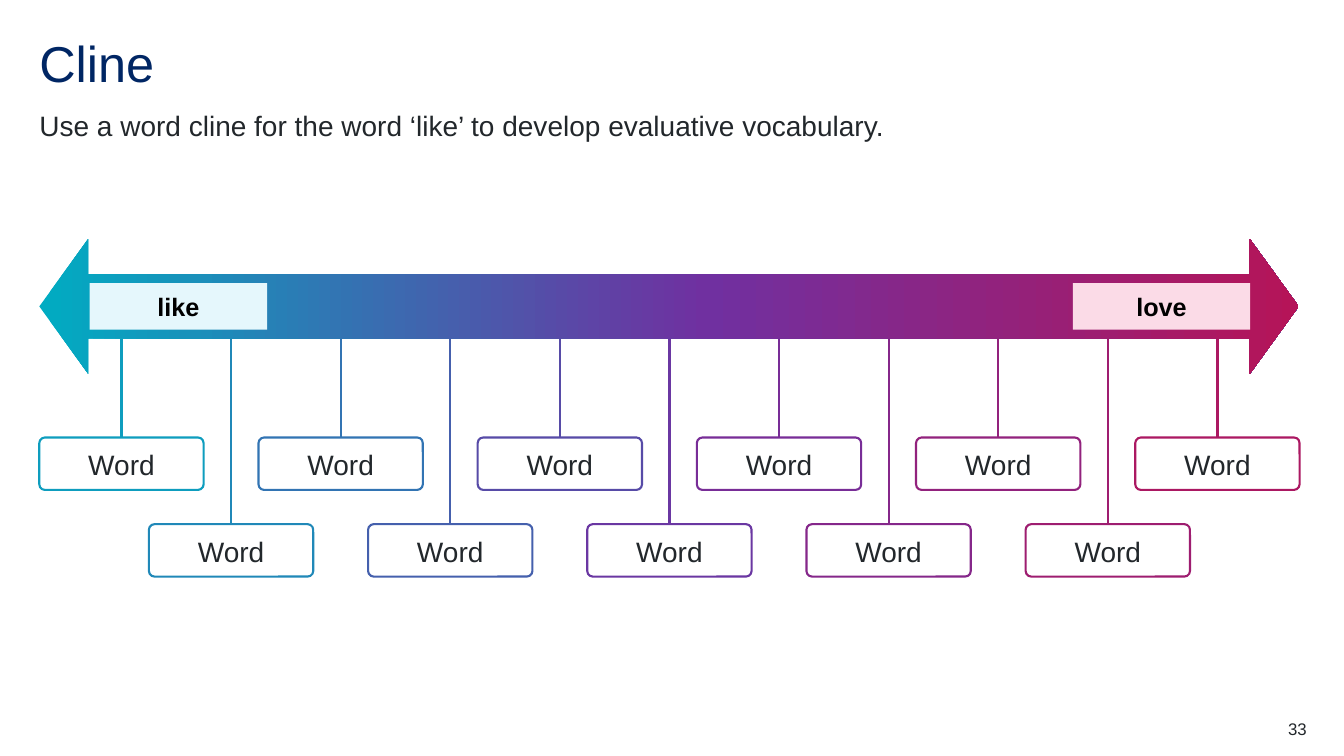
from copy import deepcopy
from dataclasses import dataclass

from lxml import etree
from pptx import Presentation
from pptx.dml.color import RGBColor
from pptx.enum import shapes, text
from pptx.oxml.ns import qn
from pptx.util import Inches, Pt

COLOURS = {
    "title": "002664", "body": "22272B", "label": "000000",
    "like": "E5F7FC", "love": "FBDBE7",
}
ARROW_STOPS = [(0, "00ACC2"), (53, "7030A0"), (100, "B51458")]
WORD_COLOURS = [
    "0E9DBE", "2088B8", "3274B3", "4560AD", "574BA7", "6A37A2",
    "782D97", "85278A", "92227D", "9E1D70", "AB1862",
]
LEFT, WIDTH = 0.39, 12.56
WORD_WIDTH, WORD_HEIGHT = 1.63, 0.52
WORD_STEP = 1.087
ROW_TOPS = (4.34, 5.2)
STEM_TOP = 3.36


@dataclass(frozen=True)
class Style:
    size: int
    colour: str
    bold: bool = False
    align: text.PP_ALIGN = text.PP_ALIGN.LEFT
    anchor: text.MSO_ANCHOR = text.MSO_ANCHOR.TOP
    insets: tuple[float, float, float, float] = (0, 0, 0, 0)
    line_spacing: float = 1.0
    space_after: int = 0


@dataclass(frozen=True)
class EndLabel:
    wording: str
    left: float


TITLE = Style(36, COLOURS["title"], line_spacing=0.9)
INTRO = Style(20, COLOURS["body"], anchor=text.MSO_ANCHOR.BOTTOM,
              line_spacing=1.5, space_after=12)
END = Style(18, COLOURS["label"], True, text.PP_ALIGN.CENTER,
            text.MSO_ANCHOR.MIDDLE, (0.09, 0.04, 0.09, 0.04))
WORD = Style(20, COLOURS["body"], align=text.PP_ALIGN.CENTER,
             anchor=text.MSO_ANCHOR.BOTTOM, insets=(0.16, 0, 0.16, 0.07))
NUMBER = Style(12, COLOURS["body"], align=text.PP_ALIGN.RIGHT)
END_LABELS = [EndLabel("like", 0.89), EndLabel("love", 10.64)]


def set_all(target, values: dict) -> None:
    for name, value in values.items():
        setattr(target, name, value)


def write(box, wording: str, style: Style) -> None:
    frame = box.text_frame
    left, top, right, bottom = map(Inches, style.insets)
    set_all(frame, {
        "word_wrap": True, "auto_size": text.MSO_AUTO_SIZE.NONE,
        "vertical_anchor": style.anchor, "margin_left": left,
        "margin_top": top, "margin_right": right, "margin_bottom": bottom,
    })
    para = frame.paragraphs[0]
    set_all(para, {
        "alignment": style.align, "line_spacing": style.line_spacing,
        "space_before": Pt(0), "space_after": Pt(style.space_after),
    })
    span = para.add_run()
    span.text = wording
    set_all(span.font, {"name": "Arial", "size": Pt(style.size), "bold": style.bold})
    span.font.color.rgb = RGBColor.from_string(style.colour)


def add_text(page, at: tuple, wording: str, style: Style) -> None:
    write(page.shapes.add_textbox(*map(Inches, at)), wording, style)


def add_plain_shape(page, kind: shapes.MSO_SHAPE, at: tuple):
    """Add a preset shape without shadow, fill or line."""
    shape = page.shapes.add_shape(kind, *map(Inches, at))
    shape.shadow.inherit = False
    shape.fill.background()
    shape.line.fill.background()
    return shape


def add_arrow(page) -> None:
    arrow = add_plain_shape(page, shapes.MSO_SHAPE.LEFT_RIGHT_ARROW,
                            (LEFT, 2.37, 12.49, 1.34))
    arrow.adjustments[0], arrow.adjustments[1] = 0.475, 0.362
    arrow.fill.gradient()
    arrow.fill.gradient_angle = 0
    stop_list = arrow.element.spPr.find(qn("a:gradFill")).find(qn("a:gsLst"))
    stop_list.insert(1, deepcopy(stop_list[0]))
    for stop, (percent, colour) in zip(arrow.fill.gradient_stops, ARROW_STOPS):
        stop.position = percent / 100
        stop.color.rgb = RGBColor.from_string(colour)


def add_end_label(page, label: EndLabel) -> None:
    box = add_plain_shape(page, shapes.MSO_SHAPE.RECTANGLE,
                          (label.left, 2.81, 1.76, 0.46))
    box.fill.solid()
    box.fill.fore_color.rgb = RGBColor.from_string(COLOURS[label.wording])
    write(box, label.wording, END)


def set_line(shape, colour: str) -> None:
    shape.line.color.rgb = RGBColor.from_string(colour)
    shape.line.width = Pt(1.5)


def add_word(page, index: int, colour: str) -> None:
    """Add a word box, in alternating rows, and its stem up to the arrow."""
    left, top = LEFT + index * WORD_STEP, ROW_TOPS[index % 2]
    box = add_plain_shape(page, shapes.MSO_SHAPE.ROUNDED_RECTANGLE,
                          (left, top, WORD_WIDTH, WORD_HEIGHT))
    box.adjustments[0] = 0.106
    set_line(box, colour)
    write(box, "Word", WORD)
    centre = Inches(left + WORD_WIDTH / 2)
    stem = page.shapes.add_connector(shapes.MSO_CONNECTOR.STRAIGHT,
                                     centre, Inches(STEM_TOP), centre, Inches(top))
    set_line(stem, colour)
    etree.SubElement(stem.element.spPr, qn("a:effectLst"))


def main() -> None:
    deck = Presentation()
    deck.slide_width, deck.slide_height = Inches(13.33), Inches(7.5)
    page = deck.slides.add_slide(deck.slide_layouts.get_by_name("Title Only"))
    title = page.shapes.title
    set_all(title, {"left": Inches(LEFT), "top": Inches(0.39),
                    "width": Inches(WIDTH), "height": Inches(0.6)})
    write(title, "Cline", TITLE)
    add_text(page, (LEFT, 1.07, WIDTH, 0.34),
             "Use a word cline for the word ‘like’ to develop evaluative vocabulary.", INTRO)
    add_arrow(page)
    for label in END_LABELS:
        add_end_label(page, label)
    for index, colour in enumerate(WORD_COLOURS):
        add_word(page, index, colour)
    add_text(page, (12.17, 7.13, 0.79, 0.2), "33", NUMBER)
    deck.save("out.pptx")


if __name__ == "__main__":
    main()
